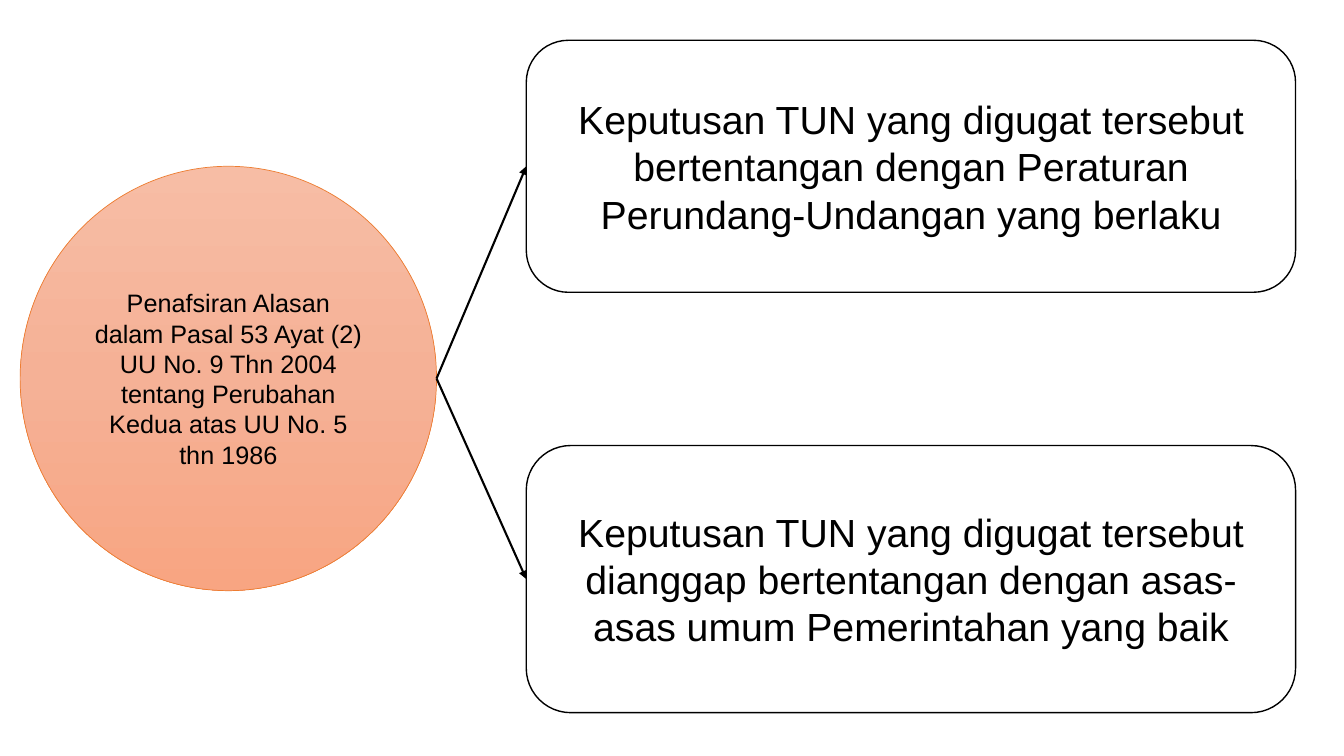
from lxml.etree import SubElement
from pptx import Presentation
from pptx.dml.color import RGBColor
from pptx.enum.shapes import MSO_CONNECTOR, MSO_SHAPE
from pptx.enum.text import MSO_ANCHOR, PP_ALIGN
from pptx.oxml.ns import qn
from pptx.util import Inches, Pt

FONT = "Arial"
BLACK = "000000"
WHITE = "FFFFFF"
ORANGE = "ED7D31"
CIRCLE_GRADIENT = [(0, "F7BDA5"), (50, "F5B196"), (100, "F8A582")]

TOPIC = ("Penafsiran Alasan dalam Pasal 53 Ayat (2) UU No. 9 Thn 2004 "
         "tentang Perubahan Kedua atas UU No. 5 thn 1986")
# Top, height and wording of each reason
REASONS = [
    (0.4, 2.5, "Keputusan TUN yang digugat tersebut bertentangan dengan "
               "Peraturan Perundang-Undangan yang berlaku"),
    (4.42, 2.65, "Keputusan TUN yang digugat tersebut dianggap bertentangan "
                 "dengan asas-asas umum Pemerintahan yang baik"),
]


def color(hex_value):
    return RGBColor.from_string(hex_value)


def set_line(line, hex_value, width):
    line.color.rgb = color(hex_value)
    line.width = Pt(width)


def fill_gradient(shape, stops):
    """Fill a shape from top to bottom with (percent, colour) stops."""
    shape.fill.gradient()
    shape.fill.gradient_angle = 270
    stop_list = shape.element.spPr.find(".//" + qn("a:gsLst"))
    for old_stop in list(stop_list):
        stop_list.remove(old_stop)
    for percent, hex_value in stops:
        stop = SubElement(stop_list, qn("a:gs"), pos=str(percent * 1000))
        SubElement(stop, qn("a:srgbClr"), val=hex_value)


def add_text_shape(slide, kind, left, top, width, height, text, size):
    shape = slide.shapes.add_shape(
        kind, Inches(left), Inches(top), Inches(width), Inches(height))
    shape.shadow.inherit = False
    frame = shape.text_frame
    frame.word_wrap = True
    frame.vertical_anchor = MSO_ANCHOR.MIDDLE
    paragraph = frame.paragraphs[0]
    paragraph.text = text
    paragraph.alignment = PP_ALIGN.CENTER
    paragraph.font.name = FONT
    paragraph.font.size = Pt(size)
    paragraph.font.color.rgb = color(BLACK)
    return shape


def add_topic_circle(slide):
    circle = add_text_shape(
        slide, MSO_SHAPE.OVAL, 0.2, 1.65, 4.13, 4.21, TOPIC, 18)
    fill_gradient(circle, CIRCLE_GRADIENT)
    set_line(circle.line, ORANGE, 0.5)
    return circle


def add_reason_box(slide, top, height, text):
    box = add_text_shape(
        slide, MSO_SHAPE.ROUNDED_RECTANGLE, 5.22, top, 7.63, height, text, 28)
    box.fill.solid()
    box.fill.fore_color.rgb = color(WHITE)
    set_line(box.line, BLACK, 1)
    return box


def add_arrow(slide, circle, box):
    """Lead from the right edge of the circle to the left side of the box."""
    arrow = slide.shapes.add_connector(
        MSO_CONNECTOR.STRAIGHT,
        circle.left + circle.width, circle.top + circle.height // 2,
        box.left, box.top + box.height // 2)
    arrow.end_connect(box, 1)
    set_line(arrow.line, BLACK, 1.5)
    SubElement(arrow.line._get_or_add_ln(), qn("a:tailEnd"), type="triangle")
    SubElement(arrow.element.spPr, qn("a:effectLst"))


def main():
    presentation = Presentation()
    presentation.slide_width = Inches(13.33)
    presentation.slide_height = Inches(7.5)
    slide = presentation.slides.add_slide(presentation.slide_layouts[6])

    # Topic on the left, reasons on the right
    circle = add_topic_circle(slide)
    boxes = [add_reason_box(slide, *reason) for reason in REASONS]

    # Arrows from the topic to each reason
    for box in boxes:
        add_arrow(slide, circle, box)

    presentation.save("out.pptx")


if __name__ == "__main__":
    main()
